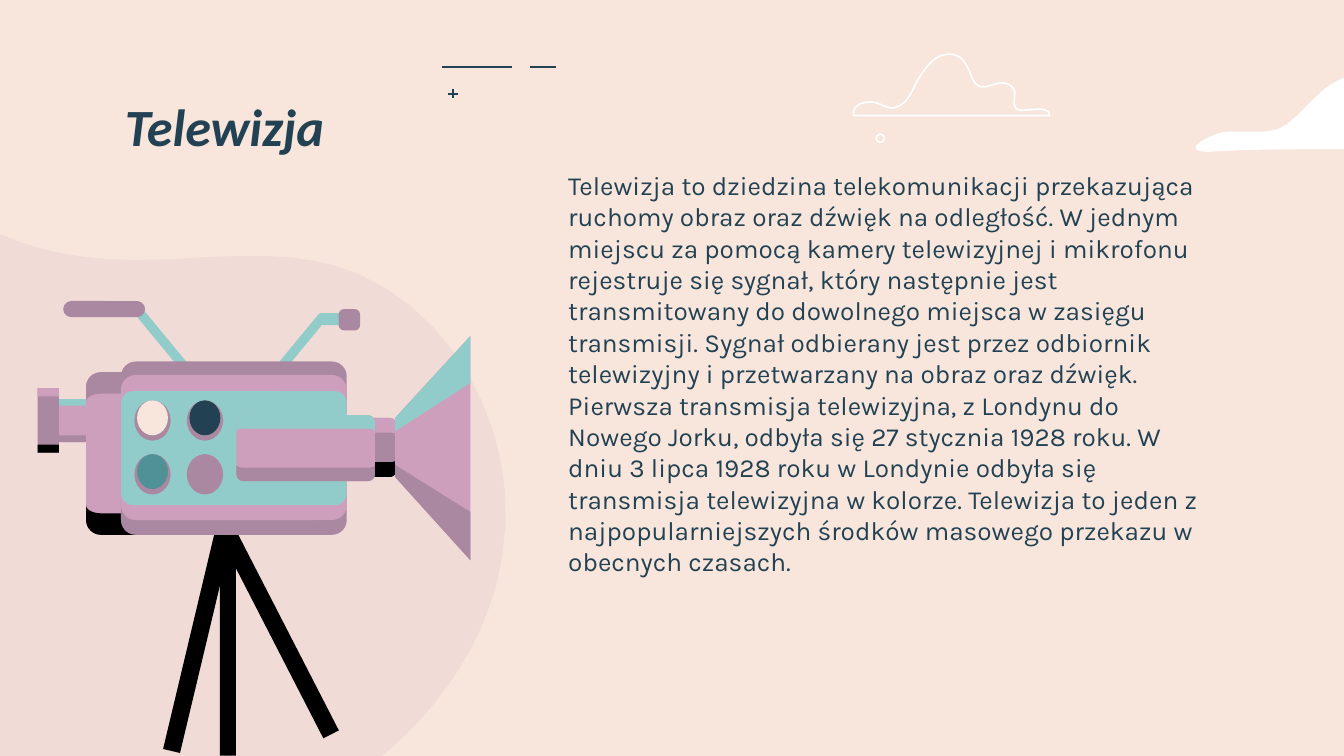
"""Build a slide about television with a film camera on a tripod."""
from dataclasses import dataclass
from typing import NamedTuple, Optional

from lxml import etree
from pptx import Presentation
from pptx.dml.color import RGBColor
from pptx.enum.shapes import MSO_CONNECTOR, MSO_SHAPE
from pptx.enum.text import MSO_ANCHOR, MSO_AUTO_SIZE, PP_ALIGN
from pptx.oxml.ns import qn
from pptx.util import Cm, Pt

RECTANGLE, ROUNDED, OVAL = MSO_SHAPE.RECTANGLE, MSO_SHAPE.ROUNDED_RECTANGLE, MSO_SHAPE.OVAL
STRAIGHT, TOP, LEFT, NO_FIT = MSO_CONNECTOR.STRAIGHT, MSO_ANCHOR.TOP, PP_ALIGN.LEFT, MSO_AUTO_SIZE.NONE
TITLE_ONLY = 5
CURVE_STEPS = 12
ROUNDNESS = 0.55


@dataclass(frozen=True)
class Theme:
    """Colours, fonts and sizes of the slide."""
    background: str = "F8E6DC"
    ink: str = "224253"
    pink: str = "CE9FBC"
    mauve: str = "AA88A1"
    aqua: str = "92CCCA"
    teal: str = "509195"
    black: str = "000000"
    white: str = "FFFFFF"
    title_font: str = "Calibri"
    body_font: str = "Karla"
    title_size: int = 28
    body_size: int = 14
    thin: float = 0.88
    thick: float = 1.32


THEME = Theme()


class Box(NamedTuple):
    """Left, top, width and height in inches."""
    left: float
    top: float
    width: float
    height: float


class Casing(NamedTuple):
    """A rounded camera part with optional shaded bands at its edges."""
    box: Box
    radius: float
    fill: str
    top_band: Optional[str] = None
    bottom_band: Optional[str] = None
    band: float = 0
    depth: float = 0


class Leg(NamedTuple):
    """A tripod leg and its turn in degrees."""
    box: Box
    turn: float


TITLE = "Telewizja"
BODY = (
    "Telewizja to dziedzina telekomunikacji przekazująca ruchomy obraz oraz dźwięk na odległość. "
    "W jednym miejscu za pomocą kamery telewizyjnej i mikrofonu rejestruje się sygnał, który następnie "
    "jest transmitowany do dowolnego miejsca w zasięgu transmisji. Sygnał odbierany jest przez odbiornik "
    "telewizyjny i przetwarzany na obraz oraz dźwięk. Pierwsza transmisja telewizyjna, z Londynu do "
    "Nowego Jorku, odbyła się 27 stycznia 1928 roku. W dniu 3 lipca 1928 roku w Londynie odbyła się "
    "transmisja telewizyjna w kolorze. Telewizja to jeden z najpopularniejszych środków masowego "
    "przekazu w obecnych czasach."
)
BLOB = [
    (-1.8, 1.11), (-2.25, 1.47, -2.51, 2.26, -2.55, 2.71), (-2.65, 3.85, -2.12, 5.02, -1.2, 5.69),
    (-0.29, 6.37, 0.99, 6.53, 2.05, 6.11), (2.31, 6, 2.56, 5.85, 2.79, 5.67),
    (3.28, 5.28, 3.65, 4.74, 3.74, 4.12), (3.89, 3.22, 3.35, 2.21, 2.47, 1.97),
    (1.9, 1.82, 1.29, 1.98, 0.71, 1.92), (0.26, 1.88, -0.18, 1.71, -0.53, 1.42),
    (-0.72, 1.27, -0.87, 0.99, -1.14, 0.94), (-1.39, 0.89, -1.61, 0.96, -1.8, 1.11),
]
WHITE_CLOUD = [
    (10, 0.58), (9.89, 0.62, 9.81, 0.7, 9.74, 0.77), (9.67, 0.84, 9.61, 0.91, 9.53, 0.95),
    (9.47, 0.98, 9.4, 0.98, 9.33, 0.98), (9.28, 0.98, 9.23, 0.98, 9.13, 0.98),
    (9.01, 0.99, 8.76, 1.13, 8.99, 1.13), (9.32, 1.11, 9.63, 1.11, 10, 1.11),
]
OUTLINED_CLOUD = [
    (7.81, 0.86), (7.81, 0.79, 7.68, 0.82, 7.62, 0.82), (7.59, 0.82, 7.56, 0.82, 7.55, 0.79),
    (7.54, 0.76, 7.55, 0.72, 7.55, 0.69), (7.54, 0.63, 7.48, 0.61, 7.43, 0.62),
    (7.38, 0.63, 7.33, 0.66, 7.28, 0.64), (7.22, 0.6, 7.23, 0.54, 7.18, 0.47),
    (7.14, 0.4, 7.06, 0.39, 6.99, 0.42), (6.93, 0.45, 6.88, 0.51, 6.84, 0.58),
    (6.79, 0.65, 6.77, 0.77, 6.66, 0.8), (6.6, 0.82, 6.53, 0.75, 6.47, 0.76),
    (6.41, 0.76, 6.34, 0.79, 6.35, 0.86),
]
ARM = [
    (1, 2.25), (1.01, 2.25, 1.02, 2.25, 1.03, 2.26), (1.41, 2.72), (1.42, 2.73, 1.42, 2.76, 1.41, 2.77),
    (1.4, 2.78, 1.38, 2.79, 1.36, 2.77), (0.98, 2.31), (0.97, 2.3, 0.97, 2.25, 1, 2.25),
]
MIRRORED_ARM = [tuple(3.4 - v if i % 2 == 0 else v + 0.08 for i, v in enumerate(step)) for step in ARM]
LEGS = [Leg(Box(0.53, 4.4, 2.33, 0.12), 90), Leg(Box(0.81, 4.39, 2.27, 0.13), 242.8),
        Leg(Box(0.39, 4.4, 2.31, 0.13), 283.4)]
GRIP = Casing(Box(0.47, 2.24, 0.61, 0.12), 0.06, THEME.mauve)
CASINGS = [
    Casing(Box(2.37, 2.33, 0.22, 0.09), 0.04, THEME.aqua),
    Casing(Box(2.52, 2.3, 0.16, 0.16), 0.04, THEME.mauve),
    Casing(Box(0.39, 2.97, 0.69, 0.32), 0.03, THEME.pink, THEME.aqua, THEME.mauve, 0.06, 0.05),
    Casing(Box(0.64, 2.77, 1.68, 1.21), 0.11, THEME.pink, THEME.mauve, THEME.black, 0.22, 0.16),
    Casing(Box(0.9, 2.69, 1.68, 1.29), 0.11, THEME.mauve),
    Casing(Box(0.9, 2.79, 1.68, 1.08), 0.11, THEME.pink),
    Casing(Box(0.9, 2.91, 1.68, 0.85), 0.09, THEME.aqua),
    Casing(Box(2.06, 3.11, 0.89, 0.44), 0.05, THEME.mauve, THEME.pink, THEME.black, 0.13, 0.11),
    Casing(Box(1.76, 3.09, 1.03, 0.49), 0.05, THEME.pink, THEME.aqua, THEME.mauve, 0.12, 0.1),
]
HOOD = [
    ([(3.5, 2.5), (3.5, 4.17), (2.94, 3.55), (2.94, 3.11)], THEME.pink),
    ([(2.94, 3.46), (3.5, 3.81), (3.5, 4.17), (2.94, 3.55)], THEME.mauve),
    ([(3.5, 2.5), (3.5, 2.85), (2.94, 3.21), (2.94, 3.11)], THEME.aqua),
]
EYEPIECE = [(Box(0.28, 2.89, 0.16, 0.48), THEME.mauve), (Box(0.28, 3.31, 0.16, 0.06), THEME.black),
            (Box(0.28, 2.89, 0.16, 0.06), THEME.pink)]
KNOBS = [[THEME.background, THEME.ink], [THEME.teal, None]]
DASHES = [(3.29, 0.5, 3.81, 0.5, THEME.thick), (3.94, 0.5, 4.14, 0.5, THEME.thick),
          (3.37, 0.66, 3.37, 0.73, THEME.thin), (3.33, 0.7, 3.41, 0.7, THEME.thin)]


def inches(value: float) -> Cm:
    """Turn inches into a length."""
    return Cm(value * 2.54)


def style(shape, fill: Optional[str], line: Optional[str] = None) -> None:
    """Give a shape a plain fill and outline."""
    shape.shadow.inherit = False
    if fill:
        shape.fill.solid()
        shape.fill.fore_color.rgb = RGBColor.from_string(fill)
    else:
        shape.fill.background()
    if line:
        shape.line.color.rgb = RGBColor.from_string(line)
        shape.line.width = Pt(THEME.thin)
    else:
        shape.line.fill.background()


def draw_preset(slide, kind, box: Box, fill: Optional[str], line: Optional[str] = None):
    """Draw a preset shape in a box."""
    shape = slide.shapes.add_shape(kind, *map(inches, box))
    style(shape, fill, line)
    return shape


def draw_outline(slide, steps: list, fill: Optional[str], line: Optional[str] = None):
    """Draw a closed outline of points and cubic curves."""
    points = [steps[0]]
    for step in steps[1:]:
        if len(step) == 2:
            points.append(step)
            continue
        start, first, second, end = points[-1], step[:2], step[2:4], step[4:]
        for index in range(1, CURVE_STEPS + 1):
            t = index / CURVE_STEPS
            points.append(tuple(
                (1 - t) ** 3 * a + 3 * (1 - t) ** 2 * t * b + 3 * (1 - t) * t * t * c + t ** 3 * d
                for a, b, c, d in zip(start, first, second, end)))
    places = [(inches(x), inches(y)) for x, y in points]
    builder = slide.shapes.build_freeform(*places[0], scale=1.0)
    builder.add_line_segments(places[1:], close=True)
    shape = builder.convert_to_shape()
    style(shape, fill, line)
    return shape


def draw_band(slide, casing: Casing, fill: str, edge: float, way: int) -> None:
    """Draw a band that follows the rounded top (way 1) or bottom (way -1) edge."""
    left, right, radius = casing.box.left, casing.box.left + casing.box.width, casing.radius
    rim, inner, end = (edge + way * value for value in (radius, casing.depth, casing.band))
    bend = radius * (1 - ROUNDNESS)
    turn = edge + way * bend
    inner_turn = inner + (end - inner) * (1 - ROUNDNESS)
    draw_outline(slide, [
        (right - radius, edge), (right - bend, edge, right, turn, right, rim), (right, end),
        (right, inner_turn, right - bend, inner, right - radius, inner), (left + radius, inner),
        (left + bend, inner, left, inner_turn, left, end), (left, rim),
        (left, turn, left + bend, edge, left + radius, edge)], fill)


def draw_casing(slide, casing: Casing) -> None:
    """Draw a rounded camera part and its bands."""
    box = casing.box
    shape = draw_preset(slide, ROUNDED, box, casing.fill)
    shape.adjustments[0] = casing.radius / min(box.width, box.height)
    if casing.bottom_band:
        draw_band(slide, casing, casing.bottom_band, box.top + box.height, -1)
    if casing.top_band:
        draw_band(slide, casing, casing.top_band, box.top, 1)


def draw_scenery(slide) -> None:
    """Draw the blob, the clouds and the dashes."""
    blob = draw_outline(slide, BLOB, THEME.pink)
    colour = blob.fill._xPr.find(".//" + qn("a:srgbClr"))
    etree.SubElement(colour, qn("a:alpha"), val="15000")
    draw_outline(slide, WHITE_CLOUD, THEME.white)
    draw_outline(slide, OUTLINED_CLOUD, None, THEME.white)
    draw_preset(slide, OVAL, Box(6.52, 1, 0.06, 0.06), None, THEME.white)
    for *ends, width in DASHES:
        connector = slide.shapes.add_connector(STRAIGHT, *map(inches, ends))
        connector.line.color.rgb = RGBColor.from_string(THEME.ink)
        connector.line.width = Pt(width)
        etree.SubElement(connector._element.spPr, qn("a:effectLst"))


def draw_camera(slide) -> None:
    """Draw the camera from its tripod up to its knobs."""
    for leg in LEGS:
        draw_preset(slide, RECTANGLE, leg.box, THEME.black).rotation = leg.turn
    draw_outline(slide, ARM, THEME.aqua)
    draw_casing(slide, GRIP)
    draw_outline(slide, MIRRORED_ARM, THEME.aqua)
    for casing in CASINGS:
        draw_casing(slide, casing)
    for outline, fill in HOOD:
        draw_outline(slide, outline, fill)
    for box, fill in EYEPIECE:
        draw_preset(slide, RECTANGLE, box, fill)
    for row, fills in enumerate(KNOBS):
        for column, fill in enumerate(fills):
            left, top = 1 + 0.39 * column, 2.98 + 0.4 * row
            draw_preset(slide, OVAL, Box(left, top, 0.27, 0.3), THEME.mauve)
            if fill:
                draw_preset(slide, OVAL, Box(left + 0.02, top, 0.23, 0.26), fill)


def write(shape, box: Box, text: str, font: str, size: int, bold: bool, spacing: float) -> None:
    """Place a text shape and write one paragraph in it."""
    shape.left, shape.top, shape.width, shape.height = map(inches, box)
    frame = shape.text_frame
    frame.word_wrap, frame.auto_size, frame.vertical_anchor = True, NO_FIT, TOP
    frame.margin_left = frame.margin_right = frame.margin_top = frame.margin_bottom = inches(0.1)
    paragraph = frame.paragraphs[0]
    paragraph.alignment, paragraph.line_spacing = LEFT, spacing
    paragraph.space_before = Pt(0)
    run = paragraph.add_run()
    run.text = text
    run.font.name, run.font.size = font, Pt(size)
    run.font.bold = run.font.italic = bold
    run.font.color.rgb = RGBColor.from_string(THEME.ink)


def main() -> None:
    """Build and save the presentation."""
    presentation = Presentation()
    presentation.slide_width, presentation.slide_height = Cm(25.4), Cm(14.29)
    slide = presentation.slides.add_slide(presentation.slide_layouts[TITLE_ONLY])
    slide.background.fill.solid()
    slide.background.fill.fore_color.rgb = RGBColor.from_string(THEME.background)
    draw_scenery(slide)
    write(slide.shapes.title, Box(0.83, 0.69, 2.32, 1.1), TITLE, THEME.title_font, THEME.title_size, True, 0.8)
    body_box = Box(4.13, 1.16, 4.96, 3.15)
    body = slide.shapes.add_textbox(*map(inches, body_box))
    write(body, body_box, BODY, THEME.body_font, THEME.body_size, False, 1.0)
    draw_camera(slide)
    presentation.save("out.pptx")


if __name__ == "__main__":
    main()
